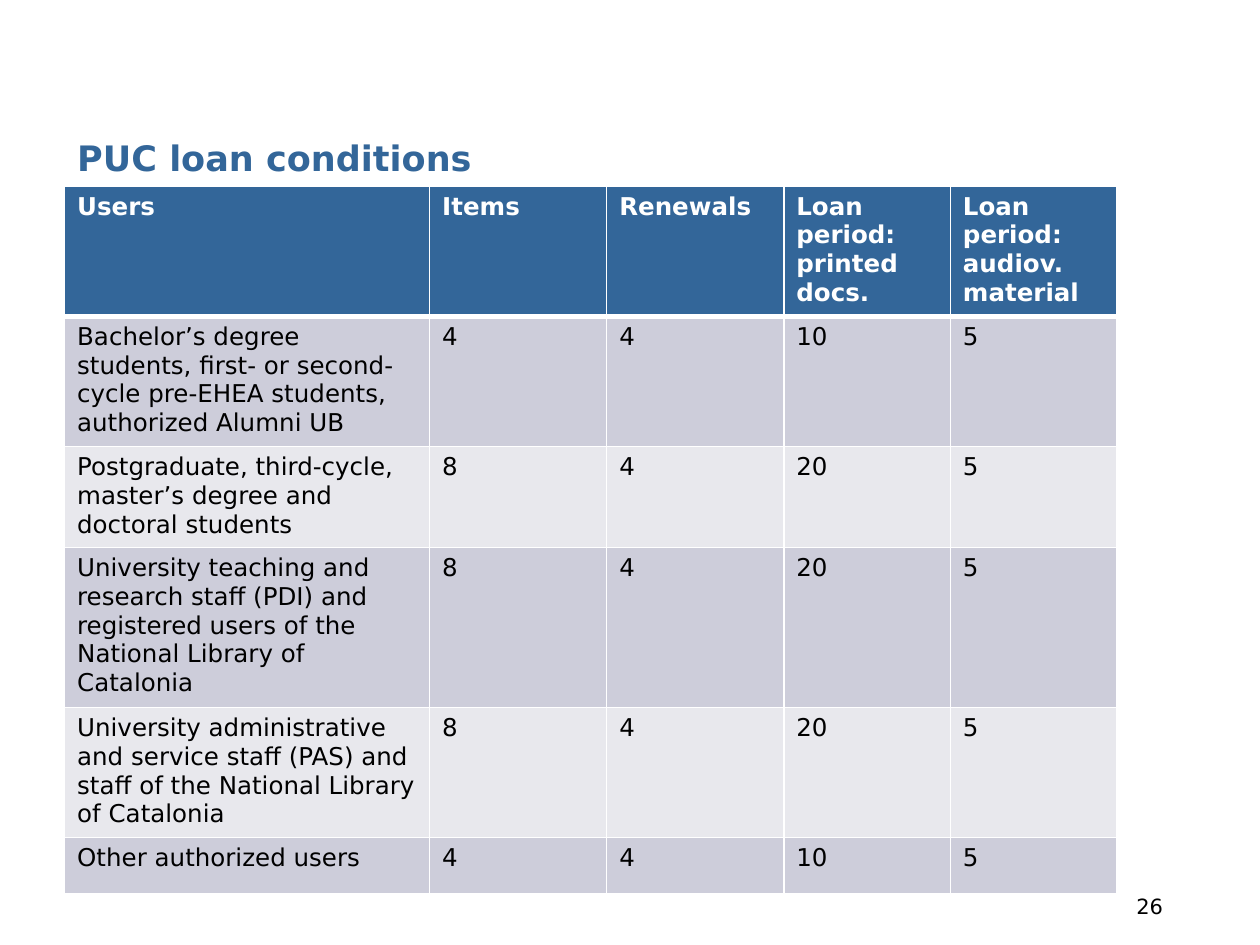
"""Build the PUC loan conditions slide."""
from lxml import etree
from pptx import Presentation
from pptx import util as u
from pptx.dml.color import RGBColor
from pptx.enum import text
from pptx.oxml.ns import qn

THEME = {
    "font": "DejaVu Sans",
    "blue": "336699", "white": "FFFFFF", "black": "000000",
    "bands": ("CDCDDA", "E8E8ED"),
    "title": 20, "body": 14, "page": 12,
    "thin": 1, "thick": 3,
}
TITLE = "PUC loan conditions"
PAGE = "26"
HEAD = ["Users", "Items", "Renewals",
        "Loan period:\nprinted docs.", "Loan period:\naudiov. material"]
USERS = [
    ("Bachelor’s degree students, first- or second-cycle pre-EHEA students, "
     "authorized Alumni UB", 4, 4, 10, 5),
    ("Postgraduate, third-cycle, master’s degree and doctoral students",
     8, 4, 20, 5),
    ("University teaching and research staff (PDI) and registered users of "
     "the National Library of Catalonia", 8, 4, 20, 5),
    ("University administrative and service staff (PAS) and staff of the "
     "National Library of Catalonia", 8, 4, 20, 5),
    ("Other authorized users", 4, 4, 10, 5),
]
LEFT, TOP = 36.9, 106.2
WIDTHS = [208.6, 101.2, 101.2, 95.2, 95.2]
HEIGHTS = [73.7, 74.5, 57.6, 91.4, 74.3, 31.8]


def write(frame, words, size, color, bold=False, align=text.PP_ALIGN.LEFT):
    for i, line in enumerate(str(words).split("\n")):
        para = frame.add_paragraph() if i else frame.paragraphs[0]
        para.alignment = align
        run = para.add_run()
        run.text = line
        font = run.font
        font.name, font.size, font.bold = THEME["font"], u.Pt(size), bold
        font.color.rgb = RGBColor.from_string(color)


def edge(cell, side, width):
    props = cell._tc.get_or_add_tcPr()
    line = etree.SubElement(props, qn(f"a:ln{side}"), w=str(u.Pt(width)))
    fill = etree.SubElement(line, qn("a:solidFill"))
    etree.SubElement(fill, qn("a:srgbClr"), val=THEME["white"])


def add_title(slide):
    box = slide.shapes.title
    box.left, box.top, box.width, box.height = map(u.Pt, (LEFT, 77, 641, 31))
    frame = box.text_frame
    frame.word_wrap = True
    frame.vertical_anchor = text.MSO_ANCHOR.TOP
    frame.auto_size = text.MSO_AUTO_SIZE.SHAPE_TO_FIT_TEXT
    write(frame, TITLE, THEME["title"], THEME["blue"], True)
    frame.paragraphs[0].line_spacing = 0.9


def add_loans(slide):
    rows = [HEAD, *USERS]
    place = map(u.Pt, (LEFT, TOP, sum(WIDTHS), sum(HEIGHTS)))
    table = slide.shapes.add_table(len(rows), len(HEAD), *place).table
    for col, width in zip(table.columns, WIDTHS):
        col.width = u.Pt(width)
    for r, (row, height) in enumerate(zip(rows, HEIGHTS)):
        table.rows[r].height = u.Pt(height)
        head = r == 0
        back = THEME["blue"] if head else THEME["bands"][(r - 1) % 2]
        ink = THEME["white"] if head else THEME["black"]
        for c, words in enumerate(row):
            cell = table.cell(r, c)
            for side in "LRTB":
                thick = (r, side) in ((0, "B"), (1, "T"))
                edge(cell, side, THEME["thick" if thick else "thin"])
            cell.fill.solid()
            cell.fill.fore_color.rgb = RGBColor.from_string(back)
            write(cell.text_frame, words, THEME["body"], ink, head)


def add_page(slide):
    box = slide.shapes.add_textbox(*map(u.Pt, (238.3, 506.2, 433.4, 23)))
    frame = box.text_frame
    frame.word_wrap = True
    frame.vertical_anchor = text.MSO_ANCHOR.MIDDLE
    write(frame, PAGE, THEME["page"], THEME["black"],
          align=text.PP_ALIGN.RIGHT)


def main():
    deck = Presentation()
    deck.slide_width, deck.slide_height = u.Pt(720), u.Pt(540)
    slide = deck.slides.add_slide(deck.slide_layouts[5])
    add_title(slide)
    add_loans(slide)
    add_page(slide)
    deck.save("out.pptx")


if __name__ == "__main__":
    main()
